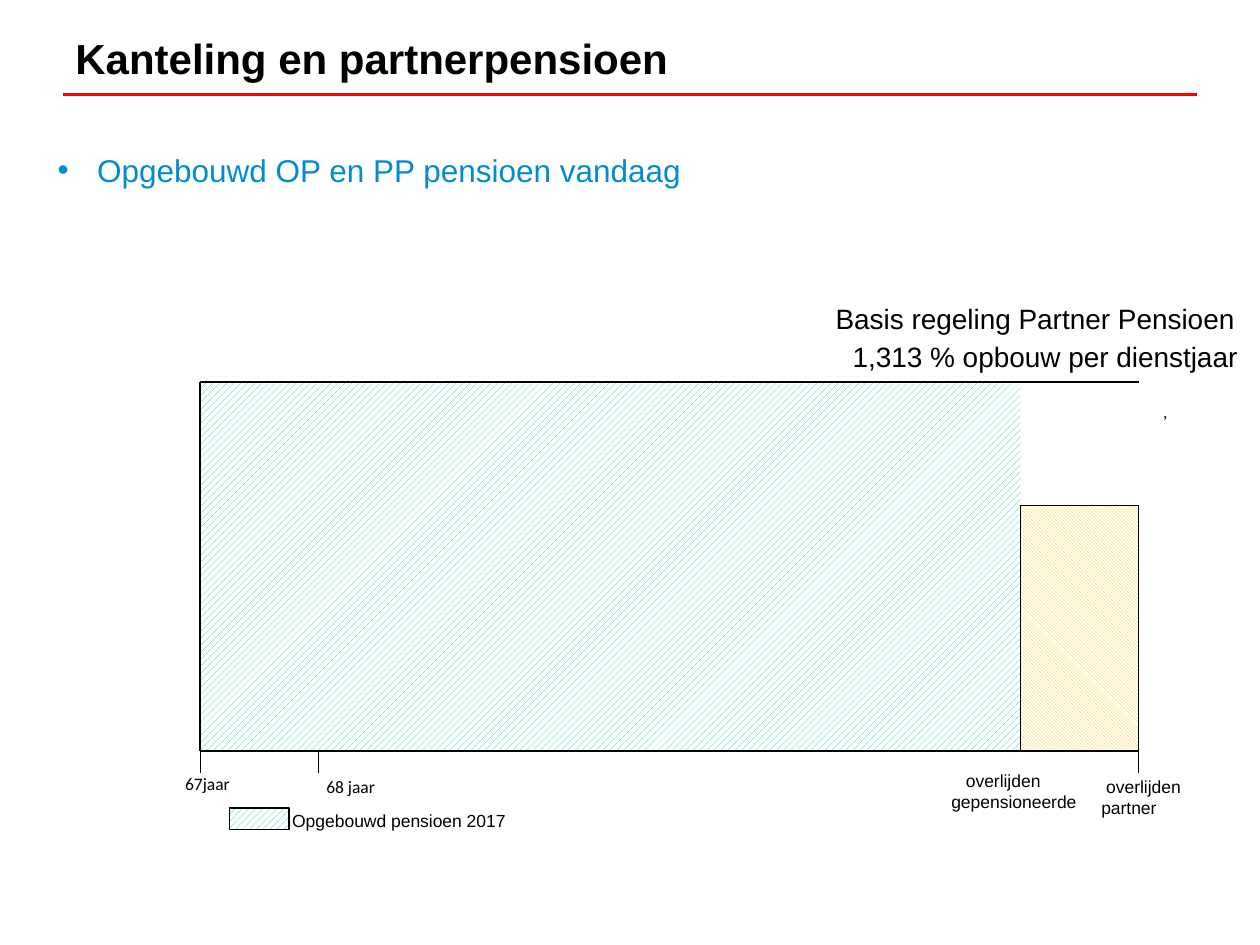
from lxml.etree import SubElement
from pptx import Presentation
from pptx.dml.color import RGBColor
from pptx.enum.dml import MSO_PATTERN_TYPE as PATTERN
from pptx.enum.shapes import MSO_CONNECTOR as CONNECTOR, MSO_SHAPE as SHAPE
from pptx.enum.text import MSO_ANCHOR as ANCHOR
from pptx.oxml.ns import qn
from pptx.util import Pt

BLACK = RGBColor(0x00, 0x00, 0x00)
WHITE = RGBColor(0xFF, 0xFF, 0xFF)
RED = RGBColor(0xFF, 0x00, 0x00)
BLUE = RGBColor(0x00, 0x8D, 0xD0)
GREEN = RGBColor(0x00, 0xCC, 0x99)
AMBER = RGBColor(0xFF, 0xC0, 0x00)

LEFT, DEATH, RIGHT = 114.5, 583.2, 650.6
TOP, PARTNER_TOP, BASE = 218.4, 288.7, 429
YEAR_68 = 181.8
TICK = 12.5


class PensionSlide:
    """Draws the elements of the pension diagram on one slide."""

    def __init__(self, slide, font="Arial"):
        self.slide = slide
        self.font = font

    def text(self, text, x, y, w, h, size=10, color=BLACK, font=None, bold=False,
             wrap=True, inset=0, anchor=ANCHOR.TOP, margin=0, indent=0, bullet=None):
        tf = self.slide.shapes.add_textbox(Pt(x), Pt(y), Pt(w), Pt(h)).text_frame
        tf.word_wrap = wrap
        tf.vertical_anchor = anchor
        tf.margin_left = tf.margin_right = Pt(inset)
        tf.margin_top = tf.margin_bottom = 0
        tf.text = text
        p = tf.paragraphs[0]
        pPr = p._p.get_or_add_pPr()
        pPr.set("marL", str(Pt(margin)))
        pPr.set("indent", str(Pt(indent)))
        if bullet:
            SubElement(pPr, qn("a:buFont")).set("typeface", self.font)
            SubElement(pPr, qn("a:buChar")).set("char", bullet)
        for r in p.runs:
            r.font.name = font or self.font
            r.font.size = Pt(size)
            r.font.bold = bold
            r.font.color.rgb = color

    def line(self, x1, y1, x2, y2, width=1, color=BLACK):
        sp = self.slide.shapes.add_connector(
            CONNECTOR.STRAIGHT, Pt(x1), Pt(y1), Pt(x2), Pt(y2))
        sp.line.color.rgb = color
        sp.line.width = Pt(width)
        SubElement(sp._element.spPr, qn("a:effectLst"))

    def hatch(self, x, y, w, h, pattern, color, outlined=True):
        sp = self.slide.shapes.add_shape(SHAPE.RECTANGLE, Pt(x), Pt(y), Pt(w), Pt(h))
        sp.shadow.inherit = False
        sp.fill.patterned()
        sp.fill.pattern = pattern
        sp.fill.fore_color.rgb = color
        sp.fill.back_color.rgb = WHITE
        if outlined:
            sp.line.color.rgb = BLACK
            sp.line.width = Pt(0.75)
        else:
            sp.line.fill.background()


def main():
    prs = Presentation()
    prs.slide_width, prs.slide_height = Pt(720), Pt(540)
    s = PensionSlide(prs.slides.add_slide(prs.slide_layouts[6]))

    s.line(36, 54, 684, 54, 2, RED)
    s.text("Kanteling en partnerpensioen", 36, 0, 516, 66, 24, bold=True,
           inset=7.2, anchor=ANCHOR.MIDDLE)
    s.text("Opgebouwd OP en PP pensioen vandaag", 33, 86.4, 666, 88, 18, BLUE,
           margin=22.5, indent=-22.5, bullet="•")
    s.text("Basis regeling Partner Pensioen", 477.5, 172.5, 242.5, 19.5, 16)
    s.text("1,313 % opbouw per dienstjaar", 487.2, 193.8, 232.8, 19.5, 16)

    s.hatch(LEFT, TOP, DEATH - LEFT, BASE - TOP, PATTERN.WIDE_UPWARD_DIAGONAL,
            GREEN, outlined=False)
    s.hatch(DEATH, PARTNER_TOP, RIGHT - DEATH, BASE - PARTNER_TOP,
            PATTERN.DARK_DOWNWARD_DIAGONAL, AMBER)
    s.line(LEFT, TOP, LEFT, BASE)
    for y in (TOP, BASE):
        s.line(LEFT, y, RIGHT, y)
    for x in (LEFT, YEAR_68, RIGHT):
        s.line(x, BASE, x, BASE + TICK, 0.5)

    for label, x, y, w in ((",", 664.6, 229, 3), ("67jaar", 105.8, 441.5, 26),
                           ("68 jaar", 186.5, 443.5, 28)):
        s.text(label, x, y, w, 12.2, font="Calibri", wrap=False)
    s.text("overlijden gepensioneerde", 543.6, 440, 84, 46, indent=8.3)
    s.text("overlijden partner", 629.3, 443.5, 65, 24.5, indent=2.8)

    s.hatch(131, 461.7, 34.2, 12.2, PATTERN.WIDE_UPWARD_DIAGONAL, GREEN)
    s.text("Opgebouwd pensioen 2017", 167, 463, 122.4, 12.2, wrap=False)

    prs.save("out.pptx")


if __name__ == "__main__":
    main()
